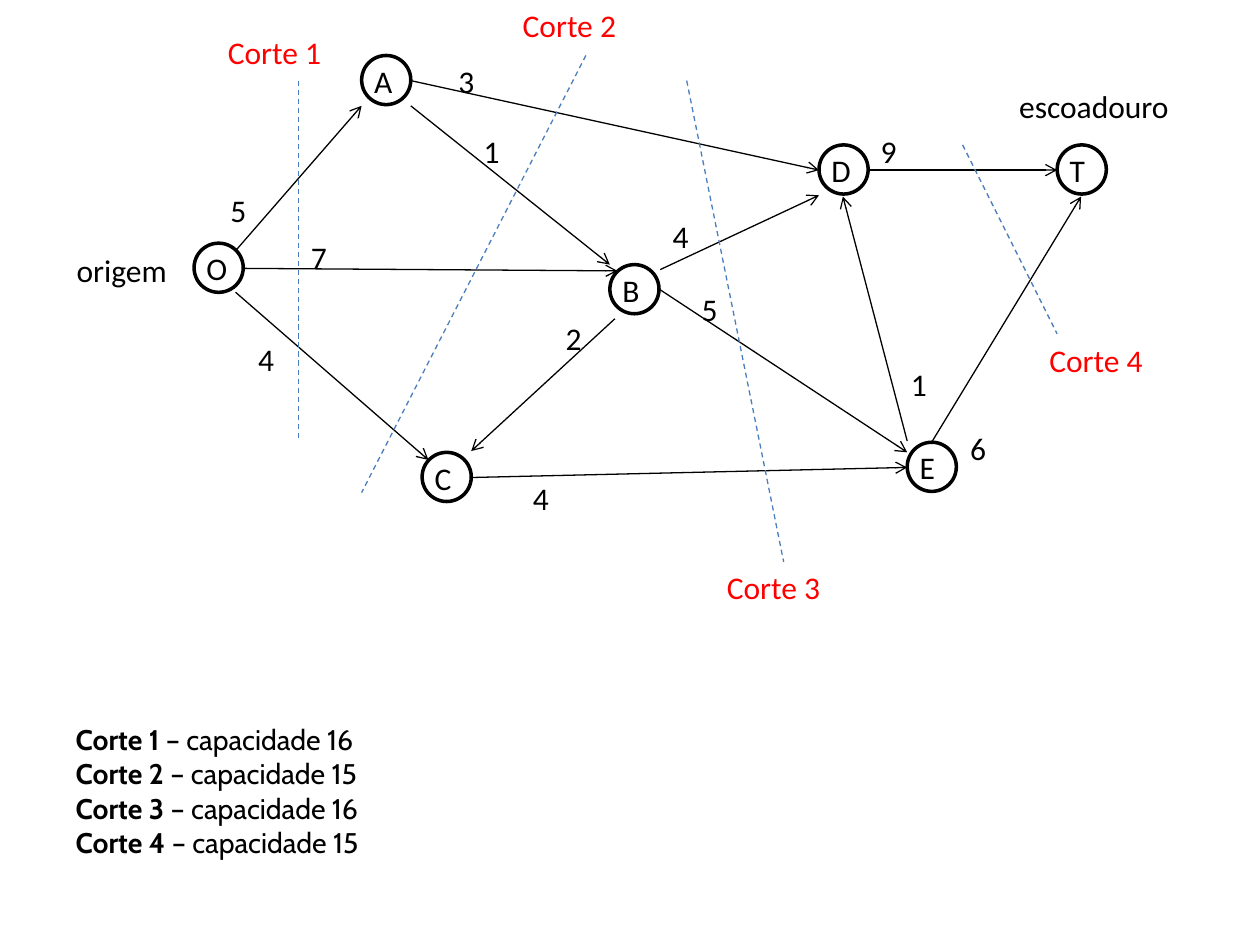
from copy import deepcopy

from lxml import etree
from pptx import Presentation, util as u
from pptx.dml.color import RGBColor
from pptx.enum import dml, shapes, text
from pptx.oxml.ns import qn

PX = 9144  # EMU per px, 100 px to the inch
BLACK = RGBColor(0x00, 0x00, 0x00)
RED = RGBColor(0xFF, 0x00, 0x00)
BLUE = RGBColor(0x4B, 0x7E, 0xBC)
NODE_SIZE = 39
LABEL_HEIGHT = 40

# Top left corner of each node
NODES = {"O": (154, 193), "B": (484, 210), "E": (720, 351), "C": (335, 359),
         "D": (650, 115), "T": (839, 115), "A": (287, 44)}

# Start, end, capacity, and left, top, width of the capacity label
ARCS = [
    ((187, 199), (287, 84), "5", (173, 147, 43)),
    ((524, 230), (720, 359), "5", (547, 225, 39)),
    ((689, 135), (839, 135), "9", (689, 100, 31)),
    ((374, 379), (720, 371), "4", (413, 375, 52)),
    ((193, 213), (490, 215), "7", (237, 184, 50)),
    ((326, 64), (650, 135), "3", (354, 44, 51)),
    ((187, 232), (340, 365), "4", (195, 265, 42)),
    ((326, 84), (484, 210), "1", (374, 100, 31)),
    ((720, 350), (669, 156), "1", (713, 285, 28)),
    ((740, 350), (858, 156), "6", (760, 336, 39)),
    ((488, 253), (374, 358), "2", (439, 248, 53)),
    ((524, 214), (650, 155), "4", (524, 167, 43)),
]

# Start, end, left, top, width of the name, and total capacity
CUTS = [
    ((237, 64), (237, 350), (171, 21, 140), 16),
    ((465, 44), (287, 391), (405, 0, 118), 15),
    ((545, 64), (622, 446), (567, 446, 102), 16),
    ((764, 115), (839, 265), (823, 266, 110), 15),
]


class NetworkSlide:
    font = "Calibri"
    size = 18
    title_font = "Cabin"
    title_size = 16.2

    def __init__(self, slide):
        self.slide = slide

    def style(self, run, name, size, color, bold=None):
        run.font.name = name
        run.font.size = u.Pt(size)
        run.font.color.rgb = color
        run.font.bold = bold

    def label(self, words, left, top, width, color=BLACK):
        box = self.slide.shapes.add_textbox(
            left * PX, top * PX, width * PX, LABEL_HEIGHT * PX)
        frame = box.text_frame
        frame.word_wrap = True
        frame.auto_size = text.MSO_AUTO_SIZE.SHAPE_TO_FIT_TEXT
        frame.text = words
        self.style(frame.paragraphs[0].runs[0], self.font, self.size, color)

    def node(self, letter, left, top):
        circle = self.slide.shapes.add_shape(
            shapes.MSO_SHAPE.OVAL, left * PX, top * PX, NODE_SIZE * PX, NODE_SIZE * PX)
        circle.shadow.inherit = False
        circle.fill.background()
        circle.line.color.rgb = BLACK
        circle.line.width = u.Pt(2)
        self.label(letter, left, top, NODE_SIZE)

    def line(self, start, end, color):
        line = self.slide.shapes.add_connector(
            shapes.MSO_CONNECTOR.STRAIGHT, *(v * PX for v in start + end))
        line.line.color.rgb = color
        line.line.width = u.Pt(0.75)
        etree.SubElement(line._element.spPr, qn("a:effectLst"))
        return line

    def arc(self, start, end):
        arrow = self.line(start, end, BLACK)
        etree.SubElement(arrow.line._get_or_add_ln(), qn("a:tailEnd"), type="arrow")

    def cut(self, start, end):
        self.line(start, end, BLUE).line.dash_style = dml.MSO_LINE.DASH

    def title(self, rows, left, top, width, height):
        title = self.slide.shapes.title
        title.left, title.top = left * PX, top * PX
        title.width, title.height = width * PX, height * PX
        frame = title.text_frame
        frame.auto_size = text.MSO_AUTO_SIZE.NONE
        frame.word_wrap = True
        frame.vertical_anchor = text.MSO_ANCHOR.MIDDLE
        paragraph = frame.paragraphs[0]
        paragraph.alignment = text.PP_ALIGN.LEFT
        for index, row in enumerate(rows):
            if index:
                paragraph.add_line_break()
            for words, bold in zip(row, (True, False)):
                run = paragraph.add_run()
                run.text = words
                self.style(run, self.title_font, self.title_size, BLACK, bold)
        # Line breaks take the text size of the rows
        for line_break in paragraph._p.findall(qn("a:br")):
            line_break.append(deepcopy(run._r.rPr))


def main():
    deck = Presentation()
    deck.slide_width, deck.slide_height = 1000 * PX, 750 * PX
    network = NetworkSlide(deck.slides.add_slide(deck.slide_layouts[5]))

    # Nodes, with source and sink
    for letter, corner in NODES.items():
        network.node(letter, *corner)
    network.label("origem", 51, 194, 110)
    network.label("escoadouro", 799, 64, 189)

    # Arcs and their capacities
    for start, end, capacity, place in ARCS:
        network.arc(start, end)
        network.label(capacity, *place)

    # Cuts and their names
    rows = []
    for number, (start, end, place, capacity) in enumerate(CUTS, 1):
        network.cut(start, end)
        network.label(f"Corte {number}", *place, color=RED)
        rows.append((f"Corte {number} ", f"– capacidade {capacity}"))

    # Capacity of each cut
    network.title(rows, 50, 565, 900, 125)
    deck.save("out.pptx")


if __name__ == "__main__":
    main()
